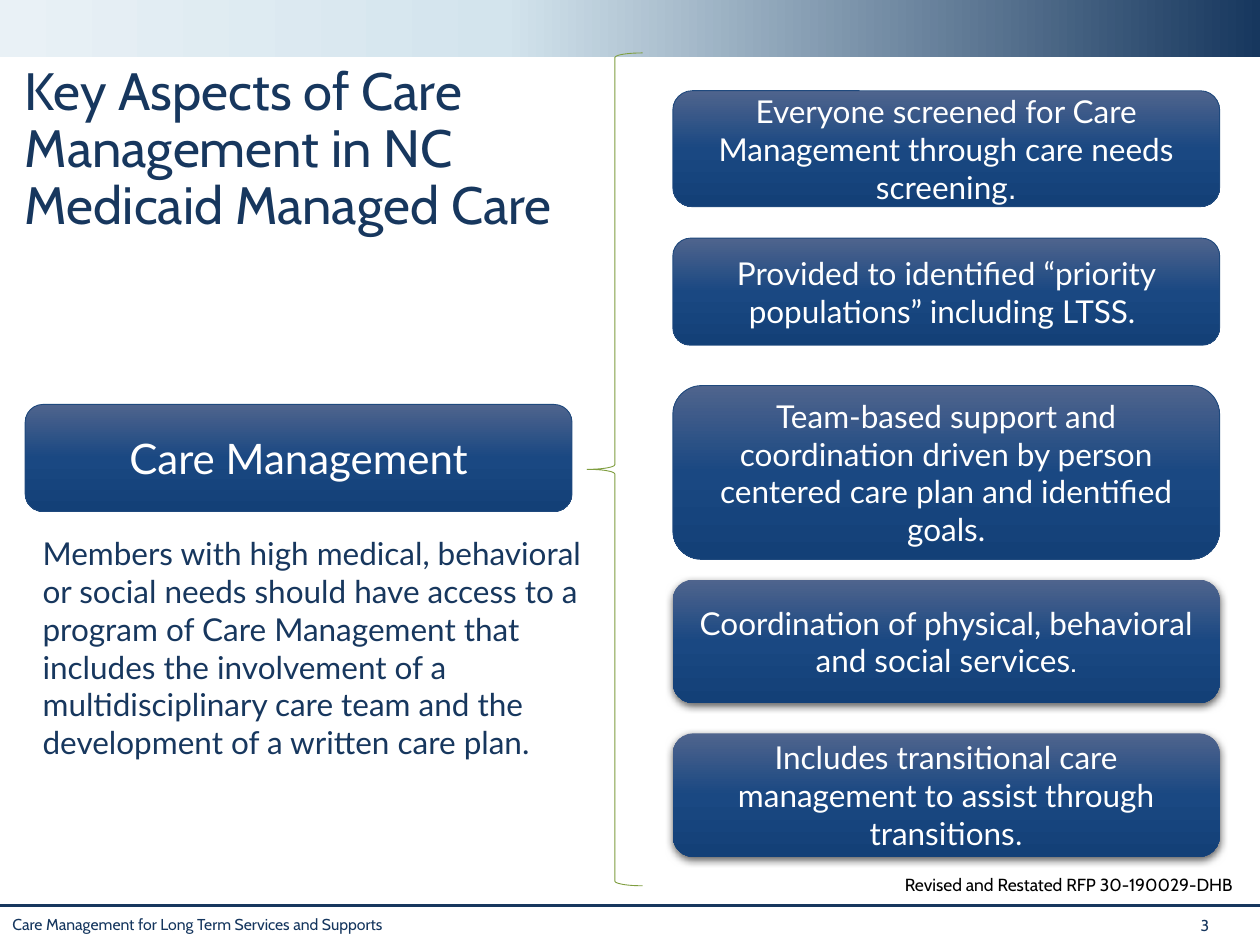
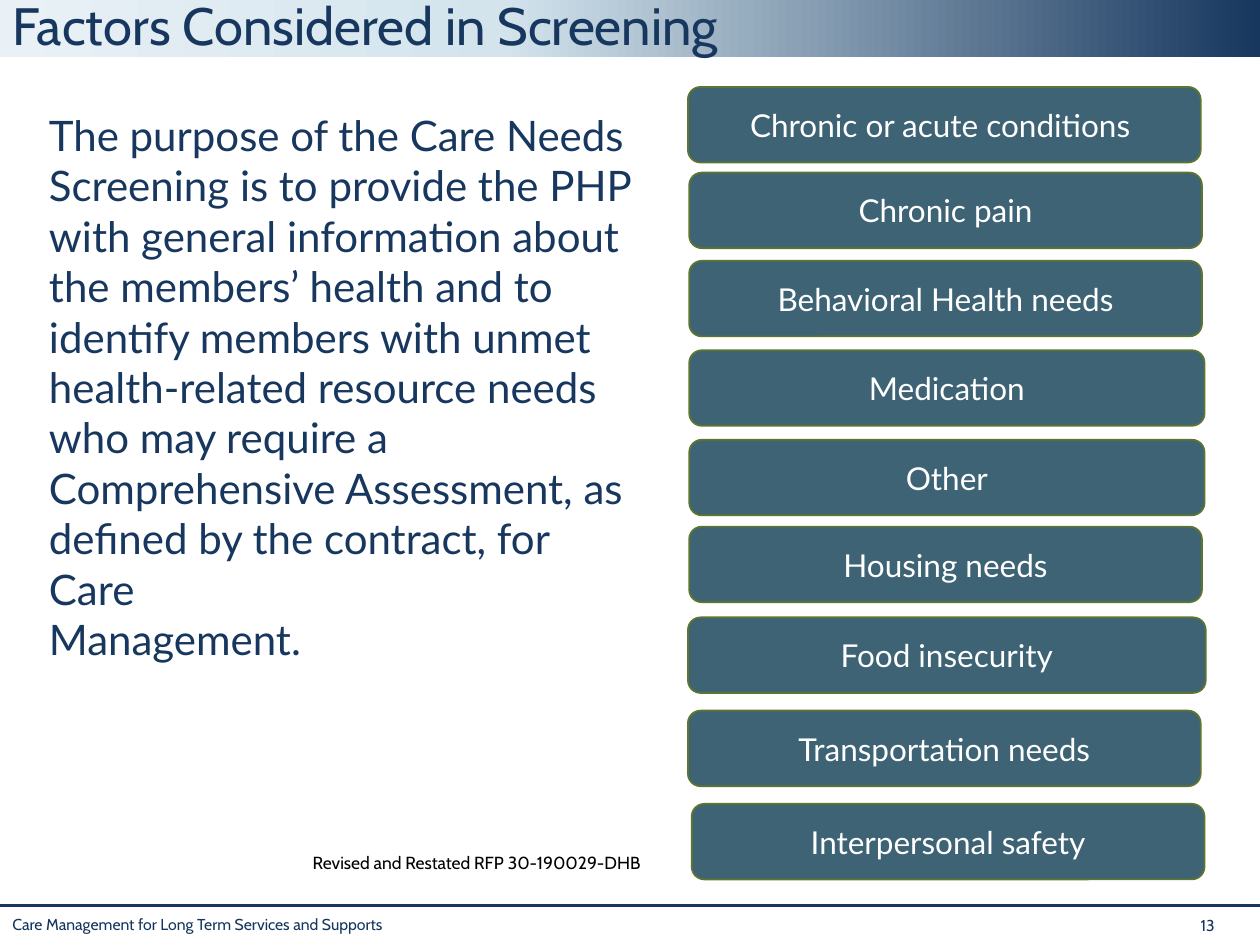
"""Build two slides on care management: its key aspects and the screening factors."""
from lxml import etree
from pptx import Presentation
from pptx.dml.color import RGBColor
from pptx.enum.shapes import MSO_CONNECTOR as LINE, MSO_SHAPE as SHAPE
from pptx.enum.text import MSO_ANCHOR as ANCHOR, PP_ALIGN as ALIGN
from pptx.oxml.ns import qn
from pptx.util import Inches, Pt

COLORS = {
    "navy": "17375E", "footer": "15365E", "white": "FFFFFF", "black": "000000",
    "box_line": "1F497D", "brace": "7F9E3F", "factor": "3D6375", "factor_line": "5E752F",
}
BAND = [(0, "17375E"), (60, "D3E4ED"), (100, "E9F1F6")]
BOX = [(0, "4F648D"), (50, "1A4882"), (100, "134077")]
SOURCE = "Revised and Restated RFP 30-190029-DHB"


def write(sp, text, size, font, color, align=ALIGN.LEFT, anchor=ANCHOR.TOP, spacing=None):
    tf = sp.text_frame
    tf.word_wrap = True
    tf.vertical_anchor = anchor
    tf.text = text
    for p in tf.paragraphs:
        p.alignment = align
        p.line_spacing = spacing
        for r in p.runs:
            r.font.size = Pt(size)
            r.font.name = font
            r.font.color.rgb = RGBColor.from_string(COLORS[color])


def fill_gradient(sp, stops, angle):
    sp.fill.gradient()
    grad = sp._element.spPr.find(qn("a:gradFill"))
    gs_list = grad.find(qn("a:gsLst"))
    for gs in list(gs_list):
        gs_list.remove(gs)
    for pos, color in stops:
        gs = etree.SubElement(gs_list, qn("a:gs"), pos=str(pos * 1000))
        etree.SubElement(gs, qn("a:srgbClr"), val=color)
    grad.find(qn("a:lin")).set("ang", str(angle * 60000))


prs = Presentation()
prs.slide_width, prs.slide_height = Inches(10), Inches(7.5)

slides = []
for number, title, left, top, width in [
    ("3", "Key Aspects of Care Management in NC Medicaid Managed Care", 0.1, 0.47, 4.56),
    ("13", "Factors Considered in Screening", 0, -0.05, 8.58),
]:
    s = prs.slides.add_slide(prs.slide_layouts[6])
    slides.append(s)
    sp = s.shapes.add_textbox(Inches(0), Inches(7.21), Inches(8.74), Inches(0.29))
    write(sp, "Care Management for Long Term Services and Supports", 9, "Cabin", "footer")
    sp = s.shapes.add_textbox(Inches(9.43), Inches(7.22), Inches(0.44), Inches(0.3))
    write(sp, number, 9, "Cabin", "footer")

    band = s.shapes.add_shape(SHAPE.RECTANGLE, 0, 0, prs.slide_width, Inches(0.45))
    band.shadow.inherit = False
    band.line.fill.background()
    fill_gradient(band, BAND, 180)

    rule = s.shapes.add_connector(LINE.STRAIGHT, 0, Inches(7.19), prs.slide_width, Inches(7.19))
    rule.line.color.rgb = RGBColor.from_string(COLORS["navy"])
    rule.line.width = Pt(1.75)
    etree.SubElement(rule._element.spPr, qn("a:effectLst"))

    sp = s.shapes.add_textbox(Inches(left), Inches(top), Inches(width), Inches(0.6))
    write(sp, title, 30, "Cabin", "navy", spacing=0.9)

aspects, screening = slides

brace = aspects.shapes.add_shape(
    SHAPE.LEFT_BRACE, Inches(4.66), Inches(0.42), Inches(0.44), Inches(6.61))
brace.shadow.inherit = False
brace.fill.background()
brace.line.color.rgb = RGBColor.from_string(COLORS["brace"])
brace.line.width = Pt(0.5)

for left, top, height, size, text, stop_font, raised in [
    (0.2, 3.21, 0.85, 24, "Care Management", None, False),
    (5.34, 0.72, 0.92, 18, "Everyone screened for Care Management through care needs screening",
     "Arial", False),
    (5.34, 1.89, 0.85, 18, "Provided to identified “priority populations” including LTSS. ",
     None, False),
    (5.34, 3.06, 1.38, 18, "Team-based support and coordination driven by person centered "
     "care plan and identified goals.", None, False),
    (5.34, 4.6, 0.98, 18, "Coordination of physical, behavioral and social services",
     "Cabin", True),
    (5.34, 5.82, 0.98, 18, "Includes transitional care management to assist through transitions",
     "Calibri", True),
]:
    sp = aspects.shapes.add_shape(
        SHAPE.ROUNDED_RECTANGLE, Inches(left), Inches(top), Inches(4.34), Inches(height))
    sp.shadow.inherit = False
    fill_gradient(sp, BOX, 90)
    write(sp, text, size, "Lato", "white", ALIGN.CENTER, ANCHOR.MIDDLE)
    if stop_font:
        r = sp.text_frame.paragraphs[0].add_run()
        r.text = "."
        r.font.size = Pt(size)
        r.font.name = stop_font
        r.font.color.rgb = RGBColor.from_string(COLORS["white"])
    if raised:
        sp.line.fill.background()
        effects = sp._element.spPr.find(qn("a:effectLst"))
        shadow = etree.SubElement(
            effects, qn("a:outerShdw"), blurRad=str(Pt(4.5)), dist=str(Pt(1.5)),
            dir="5400000", rotWithShape="0")
        color = etree.SubElement(shadow, qn("a:srgbClr"), val=COLORS["black"])
        etree.SubElement(color, qn("a:alpha"), val="63000")
    else:
        sp.line.color.rgb = RGBColor.from_string(COLORS["box_line"])
        sp.line.width = Pt(0.5)

sp = aspects.shapes.add_textbox(Inches(0.24), Inches(4.19), Inches(4.56), Inches(1.92))
write(sp, "Members with high medical, behavioral or social needs should have access to a program "
      "of Care Management that includes the involvement of a multidisciplinary care team and "
      "the development of a written care plan.", 18, "Lato", "navy")
sp = aspects.shapes.add_textbox(Inches(6.65), Inches(6.89), Inches(3.23), Inches(0.27))
write(sp, SOURCE, 10, "Cabin", "black", ALIGN.RIGHT)

sp = screening.shapes.add_textbox(Inches(0.56), Inches(6.68), Inches(4.62), Inches(0.3))
write(sp, SOURCE, 10, "Cabin", "black", ALIGN.RIGHT, ANCHOR.BOTTOM)
sp = screening.shapes.add_textbox(Inches(0.29), Inches(0.82), Inches(4.89), Inches(4.14))
write(sp, "The purpose of the Care Needs Screening is to provide the PHP with general information "
      "about the members’ health and to identify members with unmet health-related resource "
      "needs who may require a\n"
      "Comprehensive Assessment, as defined by the contract, for Care\n"
      "Management.", 24, "Lato", "navy")

for left, top, width, text in [
    (5.46, 0.69, 4.07, "Chronic or acute conditions "),
    (5.47, 1.37, 4.07, "Chronic pain"),
    (5.47, 2.07, 4.07, "Behavioral Health needs"),
    (5.47, 2.78, 4.09, "Medication"),
    (5.47, 3.49, 4.09, "Other"),
    (5.47, 4.18, 4.07, "Housing needs"),
    (5.46, 4.9, 4.11, "Food insecurity"),
    (5.46, 5.64, 4.07, "Transportation needs"),
    (5.49, 6.38, 4.07, "Interpersonal safety"),
]:
    sp = screening.shapes.add_shape(
        SHAPE.ROUNDED_RECTANGLE, Inches(left), Inches(top), Inches(width), Inches(0.6))
    sp.shadow.inherit = False
    sp.fill.solid()
    sp.fill.fore_color.rgb = RGBColor.from_string(COLORS["factor"])
    sp.line.color.rgb = RGBColor.from_string(COLORS["factor_line"])
    sp.line.width = Pt(1)
    write(sp, text, 18, "Lato", "white", ALIGN.CENTER, ANCHOR.MIDDLE)

prs.save("out.pptx")
